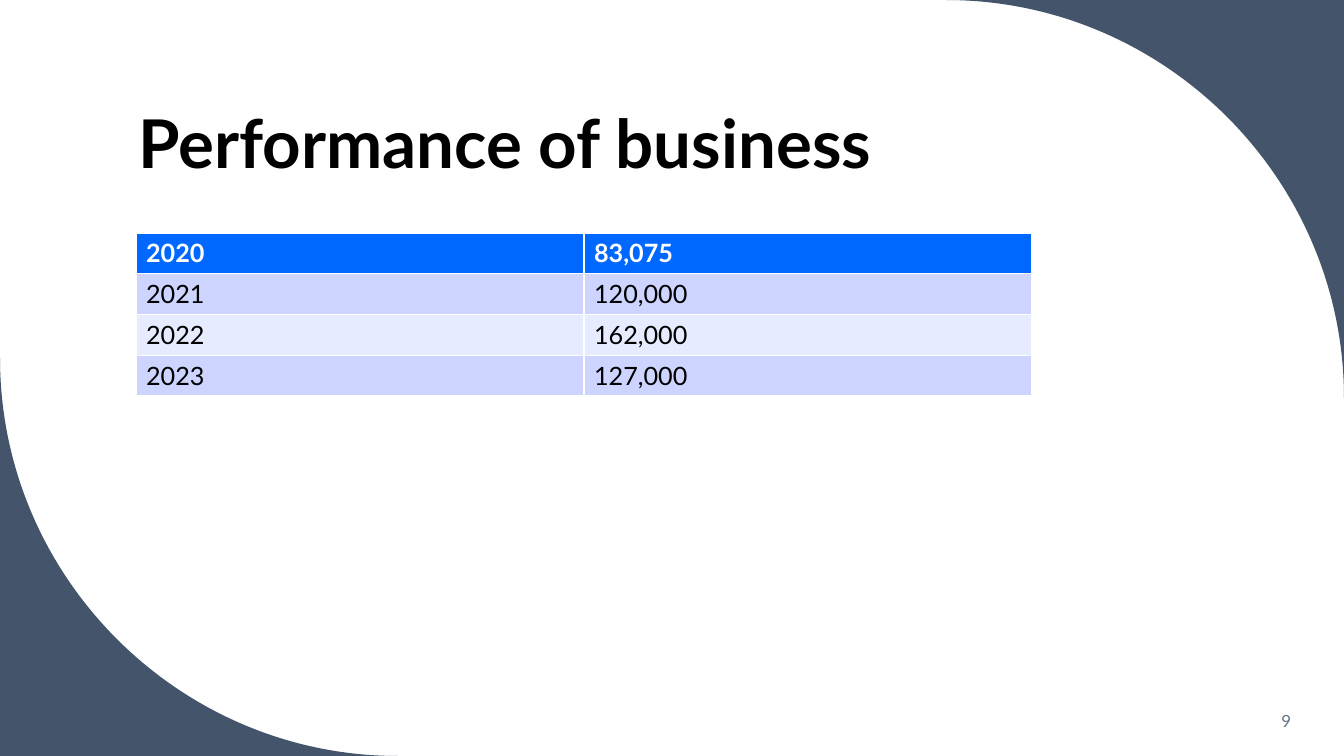
import pptx
import pptx.dml.color
import pptx.enum.text
import pptx.oxml
import pptx.oxml.ns
import pptx.util

ALIGN = pptx.enum.text.PP_ALIGN
ANCHOR = pptx.enum.text.MSO_ANCHOR
COLOURS = {
    "corner": "44546A",
    "ink": "000000",
    "paper": "FFFFFF",
    "number": "637183",
    "header": "0068FF",
    "odd": "CCD4FF",
    "even": "E7EBFF",
}
WIDTH, HEIGHT, RADIUS = 1344, 756, 398
ARC_PULL = 0.55  # control point distance that makes a curve a quarter circle
PERFORMANCE = [
    ("2020", "83,075"),
    ("2021", "120,000"),
    ("2022", "162,000"),
    ("2023", "127,000"),
]


def px(length):
    return pptx.util.Emu(round(length * 914400 / 100.8))


def colour(name):
    return pptx.dml.color.RGBColor.from_string(COLOURS[name])


def write(frame, text, size=18, ink="ink", bold=False, align=ALIGN.LEFT,
          anchor=ANCHOR.TOP, spacing=1.0):
    frame.word_wrap = True
    frame.vertical_anchor = anchor
    para = frame.paragraphs[0]
    para.alignment = align
    para.line_spacing = spacing
    span = para.add_run()
    span.text = text
    span.font.name = "Lato"
    span.font.size = pptx.util.Pt(size)
    span.font.bold = bold
    span.font.color.rgb = colour(ink)


class Page:
    """Current slide with its drawing style."""

    def __init__(self, deck):
        self.shapes = deck.slides.add_slide(deck.slide_layouts[6]).shapes

    def corner(self, corner_x, corner_y):
        """Fill the area between a slide corner and the quarter circle facing it."""
        start = (abs(corner_x - RADIUS), corner_y)
        end = (corner_x, abs(corner_y - RADIUS))
        builder = self.shapes.build_freeform(px(corner_x), px(corner_y), 1.0)
        builder.add_line_segments([(px(x), px(y)) for x, y in (start, end)])
        shape = builder.convert_to_shape()
        self.bend(shape, (corner_x, corner_y), start, end)
        shape.shadow.inherit = False
        shape.fill.solid()
        shape.fill.fore_color.rgb = colour("corner")
        shape.line.fill.background()

    def bend(self, shape, corner, start, end):
        """Turn the straight side from start to end into an arc towards the corner."""
        controls = [[a + ARC_PULL * (c - a) for a, c in zip(point, corner)]
                    for point in (start, end)]
        points = "".join(
            f'<a:pt x="{px(x) - shape.left}" y="{px(y) - shape.top}"/>'
            for x, y in (*controls, end))
        line = shape._element.findall(f".//{pptx.oxml.ns.qn('a:lnTo')}")[1]
        line.getparent().replace(line, pptx.oxml.parse_xml(
            f'<a:cubicBezTo {pptx.oxml.ns.nsdecls("a")}>{points}</a:cubicBezTo>'))

    def text(self, left, top, width, height, text, **style):
        box = self.shapes.add_textbox(px(left), px(top), px(width), px(height))
        write(box.text_frame, text, **style)

    def table(self, left, top, width, height, rows):
        """Add a table whose white grid comes from the default table style."""
        table = self.shapes.add_table(
            len(rows), len(rows[0]), px(left), px(top), px(width), px(height)).table
        for row, values in enumerate(rows):
            header = row == 0
            fill = "header" if header else "odd" if row % 2 else "even"
            for column, value in enumerate(values):
                cell = table.cell(row, column)
                cell.fill.solid()
                cell.fill.fore_color.rgb = colour(fill)
                write(cell.text_frame, value, bold=header,
                      ink="paper" if header else "ink")


def main():
    deck = pptx.Presentation()
    deck.slide_width, deck.slide_height = px(WIDTH), px(HEIGHT)
    page = Page(deck)
    page.corner(WIDTH, 0)
    page.corner(0, HEIGHT)
    page.text(129, 42, 1078, 146, "Performance of business", size=48, bold=True,
              anchor=ANCHOR.BOTTOM, spacing=0.9)
    page.text(1119, 701, 182, 40, "9", size=12, ink="number",
              align=ALIGN.RIGHT, anchor=ANCHOR.MIDDLE)
    page.table(136, 233, 896, 163, PERFORMANCE)
    deck.save("out.pptx")


if __name__ == "__main__":
    main()
